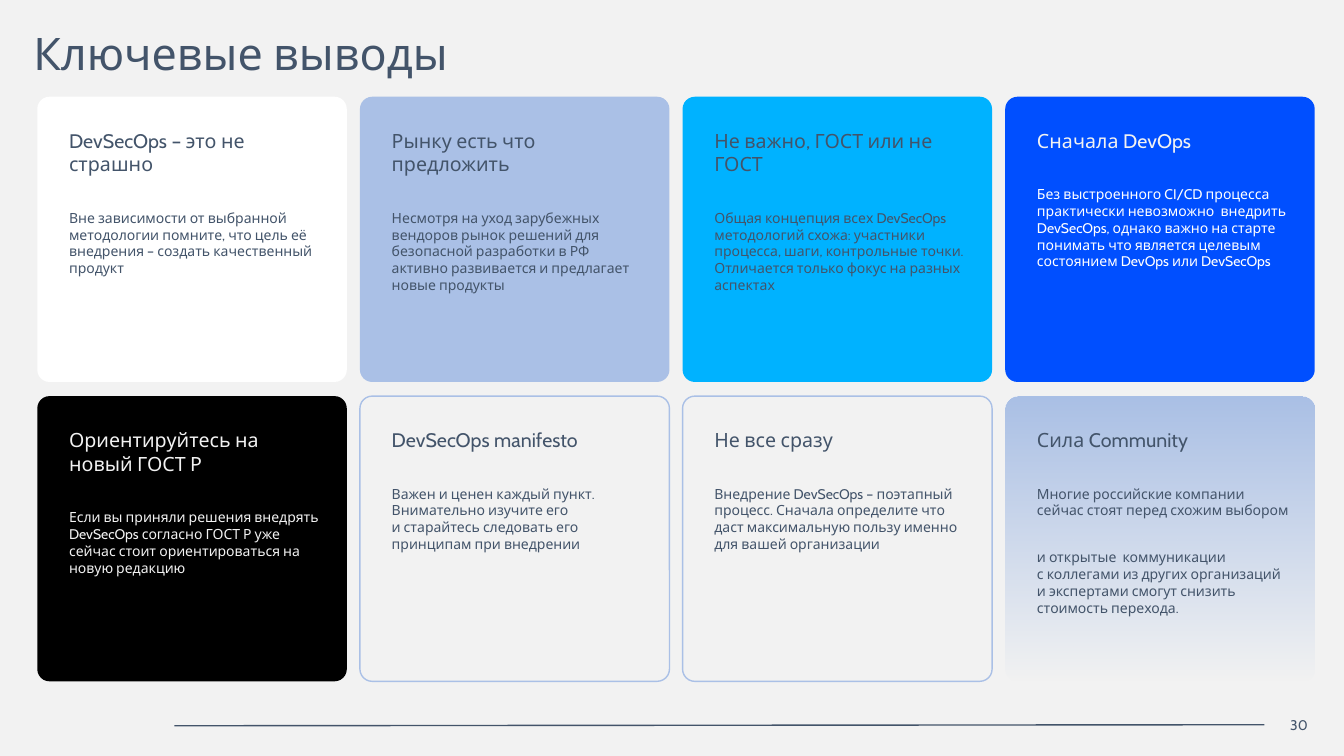
from lxml.etree import SubElement
from pptx import Presentation
from pptx.dml.color import RGBColor
from pptx.enum.shapes import MSO_CONNECTOR, MSO_SHAPE
from pptx.enum.text import MSO_ANCHOR, MSO_AUTO_SIZE, PP_ALIGN
from pptx.oxml.ns import qn
from pptx.util import Inches, Pt

FONT = "Cabin"
SLATE = RGBColor(0x43, 0x54, 0x6A)
PALE = RGBColor(0xF2, 0xF2, 0xF2)
WHITE = RGBColor(0xFF, 0xFF, 0xFF)
PERIWINKLE = RGBColor(0xAA, 0xC0, 0xE6)
SKY = RGBColor(0x00, 0xB2, 0xFF)
BLUE = RGBColor(0x00, 0x4F, 0xFF)
BLACK = RGBColor(0x00, 0x00, 0x00)

COLUMNS = 4
CARD_LEFT, CARD_TOP = 0.37, 0.96
CARD_WIDTH, CARD_HEIGHT = 3.07, 2.83
STEP_X, STEP_Y = 3.2, 2.97

# heading, body, fill (None fades out), outline, heading colour, body colour
CARDS = [
    ("DevSecOps – это не страшно",
     "Вне зависимости от выбранной методологии помните, что цель её внедрения – "
     "создать качественный продукт",
     WHITE, None, SLATE, SLATE),
    ("Рынку есть что предложить",
     "Несмотря на уход зарубежных вендоров рынок решений для безопасной разработки "
     "в РФ активно развивается и предлагает новые продукты",
     PERIWINKLE, None, SLATE, SLATE),
    ("Не важно, ГОСТ или не ГОСТ",
     "Общая концепция всех DevSecOps методологий схожа: участники процесса, шаги, "
     "контрольные точки. Отличается только фокус на разных аспектах",
     SKY, None, SLATE, SLATE),
    ("Сначала DevOps",
     "Без выстроенного CI/CD процесса практически невозможно  внедрить DevSecOps, "
     "однако важно на старте понимать что является целевым состоянием DevOps "
     "или DevSecOps",
     BLUE, None, PALE, WHITE),
    ("Ориентируйтесь на новый ГОСТ Р",
     "Если вы приняли решения внедрять DevSecOps согласно ГОСТ Р уже сейчас стоит "
     "ориентироваться на новую редакцию",
     BLACK, None, PALE, PALE),
    ("DevSecOps manifesto",
     "Важен и ценен каждый пункт. Внимательно изучите его \n"
     "и старайтесь следовать его принципам при внедрении",
     PALE, PERIWINKLE, SLATE, SLATE),
    ("Не все сразу",
     "Внедрение DevSecOps – поэтапный процесс. Сначала определите что даст "
     "максимальную пользу именно для вашей организации",
     PALE, PERIWINKLE, SLATE, SLATE),
    ("Сила Community",
     "Многие российские компании сейчас стоят перед схожим выбором \n"
     "и открытые  коммуникации \nс коллегами из других организаций \n"
     "и экспертами смогут снизить стоимость перехода.",
     None, None, SLATE, SLATE),
]


def write_paragraph(paragraph, text, size, color, align=PP_ALIGN.LEFT, space_after=0):
    paragraph.text = text
    paragraph.alignment = align
    paragraph.space_before = Pt(0)
    paragraph.space_after = Pt(space_after)
    for run in paragraph.runs:
        run.font.name = FONT
        run.font.size = Pt(size)
        run.font.color.rgb = color


def set_frame(text_frame, anchor, left=0, top=0, right=0, bottom=0):
    """Set wrapping, anchor and insets (in inches)."""
    text_frame.word_wrap = True
    text_frame.vertical_anchor = anchor
    text_frame.margin_left = Inches(left)
    text_frame.margin_top = Inches(top)
    text_frame.margin_right = Inches(right)
    text_frame.margin_bottom = Inches(bottom)


def fade_out(shape, color):
    """Fill the shape with a colour that turns transparent downwards."""
    shape.fill.gradient()
    shape.fill.gradient_angle = 270
    for stop, position in zip(shape.fill.gradient_stops, (0, 1)):
        stop.position = position
        stop.color.rgb = color
    last_color = list(shape._element.spPr.iter(qn("a:srgbClr")))[-1]
    SubElement(last_color, qn("a:alpha")).set("val", "0")


def add_title(slide, text):
    title = slide.shapes.title
    title.left, title.top = Inches(0.33), Inches(0.26)
    title.width, title.height = Inches(10.53), Inches(0.54)
    set_frame(title.text_frame, MSO_ANCHOR.TOP)
    title.text_frame.auto_size = MSO_AUTO_SIZE.SHAPE_TO_FIT_TEXT
    write_paragraph(title.text_frame.paragraphs[0], text, 32, SLATE, space_after=6)


def add_card(slide, index, heading, body, fill, outline, heading_color, body_color):
    row, column = divmod(index, COLUMNS)
    card = slide.shapes.add_shape(
        MSO_SHAPE.ROUNDED_RECTANGLE,
        Inches(CARD_LEFT + column * STEP_X), Inches(CARD_TOP + row * STEP_Y),
        Inches(CARD_WIDTH), Inches(CARD_HEIGHT))
    card.adjustments[0] = 0.043
    card.shadow.inherit = False
    if fill is None:
        fade_out(card, PERIWINKLE)
    else:
        card.fill.solid()
        card.fill.fore_color.rgb = fill
    if outline is None:
        card.line.fill.background()
    else:
        card.line.color.rgb = outline
        card.line.width = Pt(1)
    text_frame = card.text_frame
    set_frame(text_frame, MSO_ANCHOR.TOP, 0.28, 0.28, 0.2, 0.12)
    write_paragraph(text_frame.paragraphs[0], heading, 14, heading_color, space_after=24)
    write_paragraph(text_frame.add_paragraph(), body, 10, body_color, space_after=6)


def add_footer(slide, number):
    rule = slide.shapes.add_connector(
        MSO_CONNECTOR.STRAIGHT,
        Inches(1.73), Inches(7.2), Inches(12.54), Inches(7.19))
    rule.line.color.rgb = SLATE
    rule.line.width = Pt(1)
    SubElement(rule._element.spPr, qn("a:effectLst"))
    box = slide.shapes.add_textbox(
        Inches(12.54), Inches(7.1), Inches(0.43), Inches(0.19))
    set_frame(box.text_frame, MSO_ANCHOR.MIDDLE)
    write_paragraph(box.text_frame.paragraphs[0], number, 10, SLATE, PP_ALIGN.RIGHT)


def main():
    presentation = Presentation()
    presentation.slide_width = Inches(13.33)
    presentation.slide_height = Inches(7.5)
    slide = presentation.slides.add_slide(presentation.slide_layouts[5])
    slide.background.fill.solid()
    slide.background.fill.fore_color.rgb = PALE
    add_footer(slide, "30")
    add_title(slide, "Ключевые выводы")
    for index, card in enumerate(CARDS):
        add_card(slide, index, *card)
    presentation.save("out.pptx")


if __name__ == "__main__":
    main()
